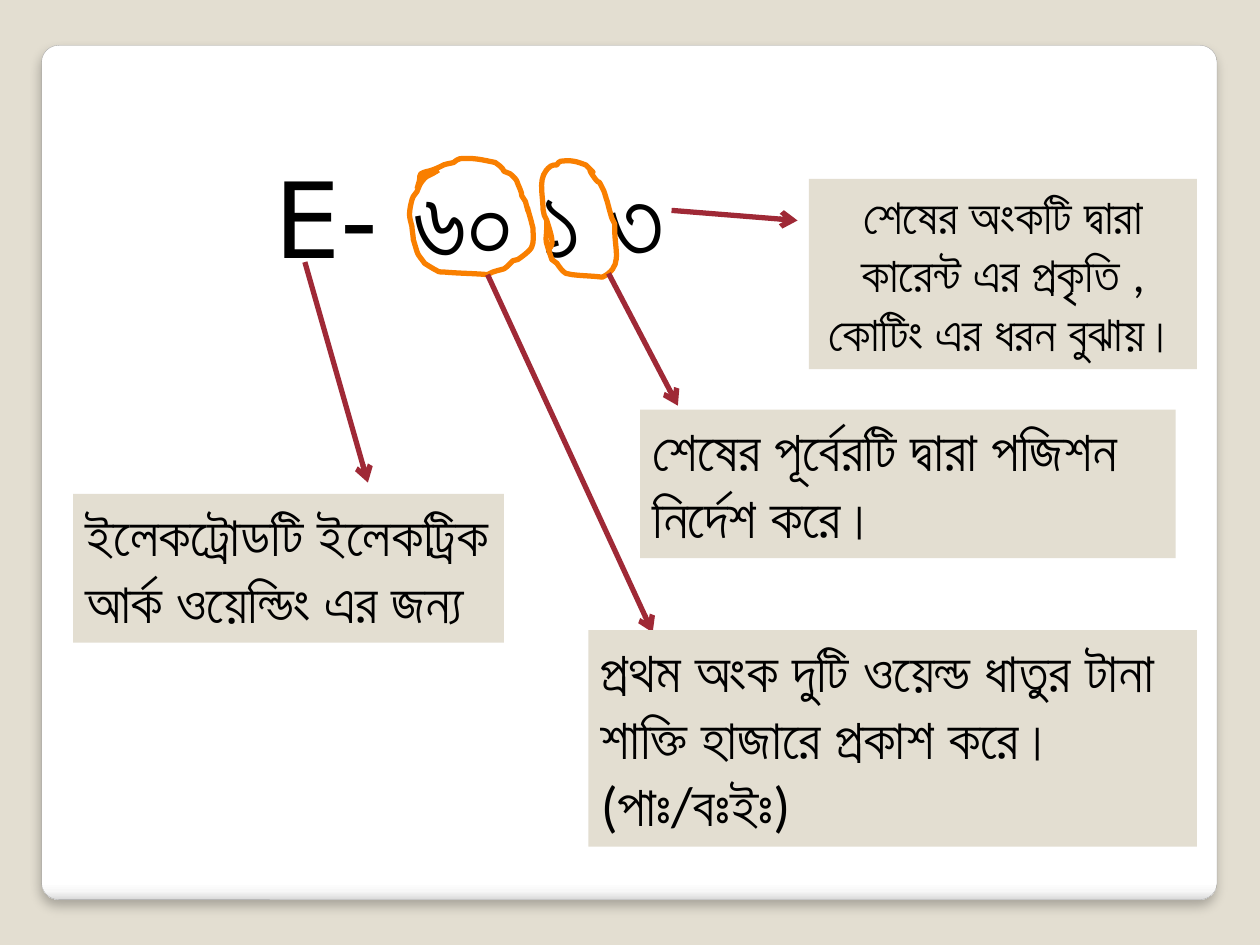
from lxml.etree import SubElement
from pptx import Presentation
from pptx.dml.color import RGBColor
from pptx.enum.shapes import MSO_CONNECTOR as Connector, MSO_SHAPE as Preset
from pptx.enum.text import MSO_ANCHOR as Anchor, MSO_AUTO_SIZE as AutoSize, PP_ALIGN as Align
from pptx.oxml import parse_xml
from pptx.oxml.ns import nsdecls, qn
from pptx.util import Emu, Pt

PX = 9144  # EMU in one px, 100 px to the inch
TITLE_ONLY = 5
COLORS = {
    "sand": "E3DED1", "card": "FFFFFF", "card_low": "F7F7F7", "card_edge": "DADADA",
    "border": "A4A4A4", "text": "000000", "arrow": "9F2936", "ring": "F97F00",
}

# Each ring: a start point, then line ends (x, y) or curves (two controls and an end).
STRENGTH_RING = [
    (331, 150), (332, 148, 332, 145, 333, 143), (333, 141, 333, 139, 334, 138),
    (337, 136, 341, 136, 343, 135), (346, 134, 348, 133, 350, 132),
    (353, 130, 357, 130, 360, 129), (362, 128, 363, 126, 365, 126),
    (376, 125, 383, 127, 393, 129), (394, 130, 396, 131, 397, 132),
    (399, 133, 399, 135, 400, 136), (402, 137, 403, 137, 405, 138),
    (408, 141, 410, 142, 411, 146), (418, 162, 410, 149, 417, 160),
    (422, 179, 416, 155, 420, 170), (424, 184, 420, 170, 423, 181),
    (423, 186, 424, 192, 422, 196), (421, 199, 414, 204, 411, 206),
    (410, 206, 408, 207, 407, 207), (398, 216, 403, 212, 391, 216), (387, 218),
    (375, 217, 364, 217, 353, 216), (351, 216, 348, 216, 347, 215),
    (343, 213, 337, 209, 337, 209), (335, 206, 332, 203, 331, 200), (328, 190),
    (328, 187, 327, 183, 327, 180), (326, 176, 325, 173, 325, 170),
    (325, 168, 326, 160, 328, 156), (329, 155, 330, 153, 331, 152),
    (332, 150, 332, 149, 333, 147), (334, 145, 337, 141, 339, 140),
    (340, 139, 342, 139, 343, 138), (345, 137, 348, 135, 348, 135),
]
POSITION_RING = [
    (435, 198), (436, 197, 438, 196, 438, 194), (439, 189, 435, 179, 434, 175),
    (432, 171), (431, 166), (431, 153, 426, 140, 437, 132),
    (438, 131, 440, 131, 442, 131), (443, 130, 443, 128, 445, 128),
    (454, 127, 457, 128, 465, 131), (479, 145, 462, 127, 471, 140),
    (478, 150, 473, 139, 478, 149), (480, 152, 481, 158, 482, 160),
    (482, 160, 485, 172, 486, 174), (488, 178), (487, 196, 494, 208, 483, 217),
    (482, 218, 480, 219, 478, 220), (470, 219, 462, 219, 454, 218),
    (452, 218, 451, 218, 449, 217), (446, 215, 444, 212, 442, 209),
    (438, 206), (435, 197), (432, 187, 434, 194, 434, 175),
]

# Each part of the code: its ring, its arrow, and the box, size, alignment and text of its note.
PARTS = [
    (None, (242, 208, 292, 383), (58, 392, 342, 118), 32, Align.LEFT,
     "ইলেকট্রোডটি ইলেকট্রিক আর্ক ওয়েল্ডিং এর জন্য"),
    (STRENGTH_RING, (387, 218, 518, 502), (467, 500, 483, 172), 32, Align.LEFT,
     "প্রথম অংক দুটি ওয়েল্ড ধাতুর টানা শাক্তি হাজারে প্রকাশ করে। (পাঃ/বঃইঃ)"),
    (POSITION_RING, (483, 217, 538, 322), (508, 325, 425, 118), 32, Align.LEFT,
     "শেষের পূর্বেরটি দ্বারা পজিশন নির্দেশ করে।"),
    (None, (533, 167, 633, 175), (642, 142, 308, 151), 28, Align.CENTER,
     "শেষের অংকটি দ্বারা কারেন্ট এর প্রকৃতি , কোটিং এর ধরন বুঝায়।"),
]


def px(*lengths):
    return [Emu(length * PX) for length in lengths]


def color(name):
    return RGBColor.from_string(COLORS[name])


def set_attributes(target, values):
    for name, value in values.items():
        setattr(target, name, value)


def set_line(shape, name, width):
    shape.line.color.rgb = color(name)
    shape.line.width = Pt(width)


def set_text(shape, runs, size, align, frame_format):
    """Fill the shape with one paragraph made of (text, font name) runs."""
    set_attributes(shape.text_frame, {"word_wrap": True, **frame_format})
    paragraph = shape.text_frame.paragraphs[0]
    paragraph.alignment = align
    for text, font_name in runs:
        run = paragraph.add_run()
        run.text = text
        set_attributes(run.font, {"name": font_name, "size": Pt(size)})
        run.font.color.rgb = color("text")


def add_card(slide):
    card = slide.shapes.add_shape(Preset.ROUNDED_RECTANGLE, *px(33, 36, 933, 678))
    card.adjustments[0] = 0.02
    set_line(card, "border", 0.16)
    stops = [(0, "card"), (98, "card"), (99, "card_low"), (100, "card_edge")]
    stop_xml = "".join(
        f'<a:gs pos="{position * 1000}"><a:srgbClr val="{COLORS[name]}"/></a:gs>'
        for position, name in stops)
    properties = card._element.spPr
    properties.find(qn("a:ln")).addprevious(parse_xml(
        f'<a:gradFill {nsdecls("a")} rotWithShape="1"><a:gsLst>{stop_xml}</a:gsLst>'
        '<a:lin ang="5400000" scaled="0"/></a:gradFill>'))
    properties.append(parse_xml(
        f'<a:effectLst {nsdecls("a")}><a:outerShdw blurRad="{Pt(6)}" dist="{Pt(4)}" '
        f'dir="5400000" algn="tl" rotWithShape="0"><a:srgbClr val="{COLORS["text"]}">'
        '<a:alpha val="25000"/></a:srgbClr></a:outerShdw></a:effectLst>'))


def place_title(slide):
    title = slide.shapes.title
    slide.shapes._spTree.append(title._element)  # bring in front of the card
    set_attributes(title, dict(zip(("left", "top", "width", "height"), px(208, 117, 367, 111))))
    set_text(title, [("E- ", "DejaVu Sans"), ("৬০ ১ ৩", "Calibri")], 60, Align.LEFT,
             {"auto_size": AutoSize.SHAPE_TO_FIT_TEXT, "vertical_anchor": Anchor.TOP})


def add_note(slide, box, size, align, text):
    note = slide.shapes.add_textbox(*px(*box))
    note.fill.solid()
    note.fill.fore_color.rgb = color("sand")
    set_text(note, [(text, "Calibri")], size, align, {"auto_size": AutoSize.SHAPE_TO_FIT_TEXT})


def add_arrow(slide, ends):
    arrow = slide.shapes.add_connector(Connector.STRAIGHT, *px(*ends))
    set_line(arrow, "arrow", 3)
    SubElement(arrow.line._get_or_add_ln(), qn("a:tailEnd")).set("type", "arrow")
    SubElement(arrow._element.spPr, qn("a:effectLst"))


def add_ring(slide, segments):
    """Draw an outline through all points, then join each curve's three points into one curve."""
    start, *rest = segments
    points = [px(*segment[i:i + 2]) for segment in rest for i in range(0, len(segment), 2)]
    builder = slide.shapes.build_freeform(*px(*start))
    builder.add_line_segments(points, close=False)
    ring = builder.convert_to_shape()
    steps = iter(list(ring._element.iter(qn("a:lnTo"))))
    for segment in rest:
        first = next(steps)
        if len(segment) == 6:
            first.tag = qn("a:cubicBezTo")
            for step in (next(steps), next(steps)):
                first.append(step[0])
                step.getparent().remove(step)
    ring.fill.background()
    ring.shadow.inherit = False
    set_line(ring, "ring", 3)


def main():
    presentation = Presentation()
    presentation.slide_width, presentation.slide_height = px(1000, 750)
    slide = presentation.slides.add_slide(presentation.slide_layouts[TITLE_ONLY])
    slide.background.fill.solid()
    slide.background.fill.fore_color.rgb = color("sand")
    add_card(slide)
    place_title(slide)
    for ring, arrow, *note in PARTS:
        if ring:
            add_ring(slide, ring)
        add_arrow(slide, arrow)
        add_note(slide, *note)
    presentation.save("out.pptx")


if __name__ == "__main__":
    main()
